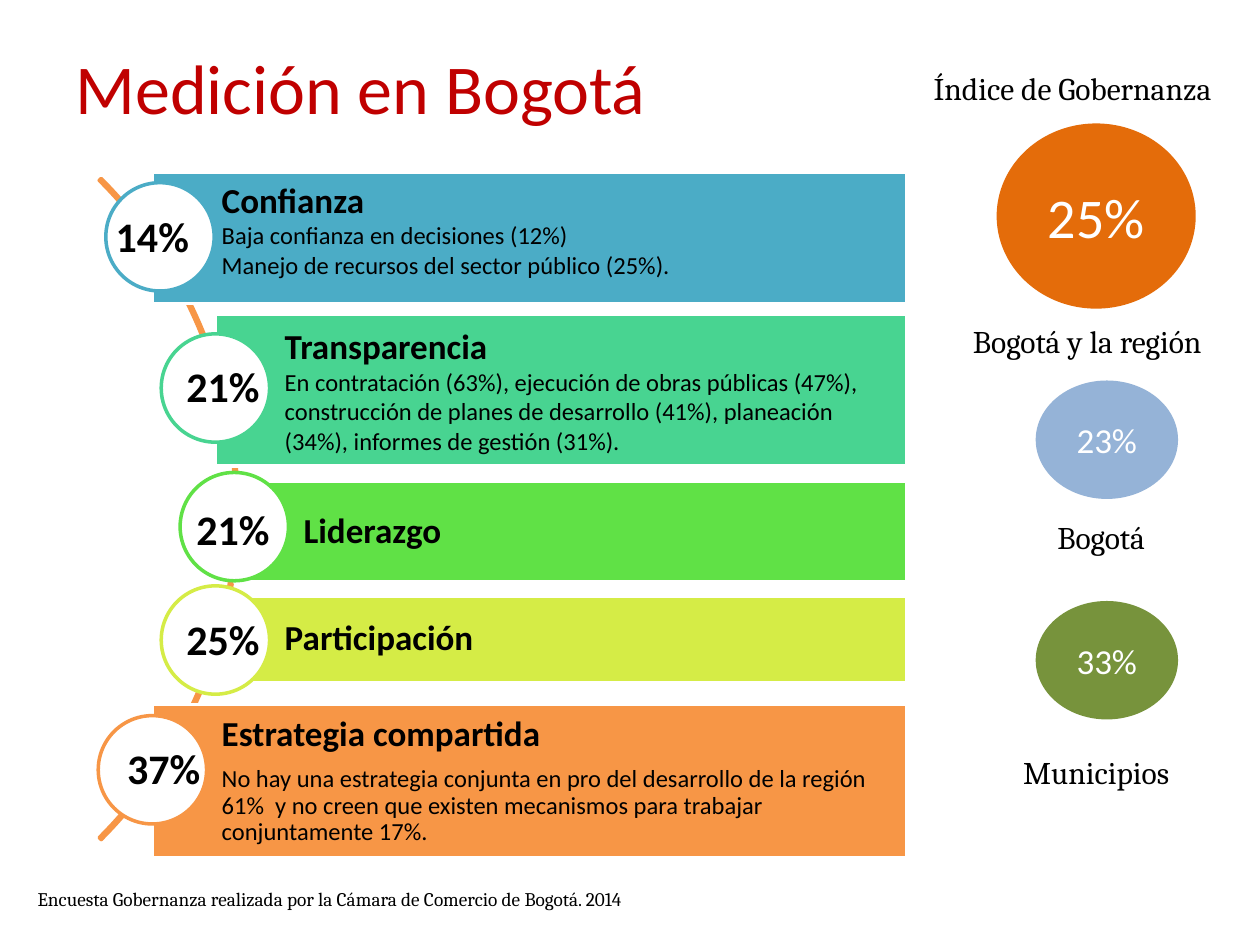
from dataclasses import dataclass

from pptx import Presentation
from pptx.dml.color import RGBColor
from pptx.enum.shapes import MSO_SHAPE as Shape
from pptx.enum.text import MSO_ANCHOR as Anchor, PP_ALIGN as Align
from pptx.util import Inches, Pt


@dataclass(frozen=True)
class Theme:
    sans: str = "Calibri"
    serif: str = "Cambria"
    title: str = "C00000"
    ink: str = "000000"
    paper: str = "FFFFFF"
    arc: str = "F79646"
    title_size: int = 40
    badge_size: int = 24
    heading_size: int = 20
    label_size: int = 18
    body_size: int = 14
    note_size: int = 11
    outline: int = 2


THEME = Theme()

BANDS = [
    dict(left=1.21, top=1.37, height=1.04, color="4BACC6", circle=(0.84, 1.45),
         badge=(0.82, 1.62), share="14%", heading="Confianza", bottom=0.21,
         details=["Baja confianza en decisiones (12%)",
                  "Manejo de recursos del sector público (25%)."]),
    dict(left=1.71, top=2.49, height=1.21, color="48D491", circle=(1.28, 2.65),
         badge=(1.38, 2.81), share="21%", heading="Transparencia",
         details=["En contratación (63%), ejecución de obras públicas (47%), "
                  "construcción de planes de desarrollo (41%), planeación "
                  "(34%), informes de gestión (31%)."]),
    dict(left=1.86, top=3.82, height=0.8, color="60E146", circle=(1.43, 3.75),
         badge=(1.46, 3.95), share="21%", heading="Liderazgo",
         spacing=0.9, after=7),
    dict(left=1.71, top=4.73, height=0.69, color="D5EC46", circle=(1.28, 4.65),
         badge=(1.38, 4.82), share="25%", heading="Participación",
         spacing=0.9, after=7),
    dict(left=1.21, top=5.59, height=1.22, color="F79646", circle=(0.78, 5.68),
         badge=(0.91, 5.84), share="37%", heading="Estrategia compartida",
         spacing=0.9, after=7,
         details=["No hay una estrategia conjunta en pro del desarrollo de la "
                  "región 61%  y no creen que existen mecanismos para trabajar "
                  "conjuntamente 17%."]),
]

INDEXES = [
    ("25%", (7.91, 0.98, 1.58, 1.47), "E46C0A", 32,
     "Bogotá y la región", (7.38, 2.51, 2.5, 0.4)),
    ("23%", (8.22, 3.02, 1.13, 0.94), "95B3D7", 20,
     "Bogotá", (8.07, 4.06, 1.34, 0.4)),
    ("33%", (8.22, 4.77, 1.13, 0.94), "77933C", 20,
     "Municipios", (7.76, 5.93, 1.88, 0.4)),
]


def write(paragraph, text, *, size, font=THEME.sans, color=THEME.ink,
          bold=False, align=Align.LEFT, spacing=None, after=0):
    paragraph.alignment = align
    paragraph.space_before = Pt(0)
    paragraph.space_after = Pt(after)
    if spacing:
        paragraph.line_spacing = spacing
    run = paragraph.add_run()
    run.text = text
    run.font.name = font
    run.font.size = Pt(size)
    run.font.bold = bold
    run.font.color.rgb = RGBColor.from_string(color)


class SlideBuilder:
    def __init__(self, slide, theme):
        self.slide = slide
        self.theme = theme

    def title(self, text, box):
        heading = self.slide.shapes.title
        heading.left, heading.top, heading.width, heading.height = map(Inches, box)
        heading.text_frame.vertical_anchor = Anchor.MIDDLE
        write(heading.text_frame.paragraphs[0], text,
              size=self.theme.title_size, color=self.theme.title)

    def text(self, text, box, wrap=True, **style):
        frame = self.slide.shapes.add_textbox(*map(Inches, box)).text_frame
        frame.word_wrap = wrap
        write(frame.paragraphs[0], text, **style)

    def shape(self, kind, box, fill=None, line=None):
        figure = self.slide.shapes.add_shape(kind, *map(Inches, box))
        figure.shadow.inherit = False
        if fill:
            figure.fill.solid()
            figure.fill.fore_color.rgb = RGBColor.from_string(fill)
        else:
            figure.fill.background()
        if line:
            figure.line.color.rgb = RGBColor.from_string(line)
            figure.line.width = Pt(self.theme.outline)
        else:
            figure.line.fill.background()
        return figure

    def arc(self, box):
        curve = self.shape(Shape.BLOCK_ARC, box, line=self.theme.arc)
        for position, value in enumerate((189, 27, 0.003)):
            curve.adjustments[position] = value

    def band(self, left, top, height, color, circle, heading, details=(),
             bottom=0.06, spacing=None, after=0, right=7.2, **_):
        theme = self.theme
        bar = self.shape(Shape.RECTANGLE, (left, top, right - left, height),
                         color, theme.paper)
        frame = bar.text_frame
        frame.word_wrap = True
        frame.vertical_anchor = Anchor.MIDDLE
        frame.margin_left = Inches(0.55)
        frame.margin_top = frame.margin_right = Inches(0.06)
        frame.margin_bottom = Inches(bottom)
        write(frame.paragraphs[0], heading, size=theme.heading_size,
              bold=True, spacing=spacing, after=after)
        for detail in details:
            write(frame.add_paragraph(), detail, size=theme.body_size,
                  spacing=spacing, after=after * 0.7)
        self.shape(Shape.OVAL, (*circle, 0.86, 0.86), theme.paper, color)

    def badge(self, share, corner):
        self.text(share, (*corner, 0.79, 0.5), wrap=False,
                  size=self.theme.badge_size, bold=True)

    def label(self, text, box):
        self.text(text, box, size=self.theme.label_size,
                  font=self.theme.serif, align=Align.CENTER)

    def index(self, share, box, color, size, place, place_box):
        frame = self.shape(Shape.FLOWCHART_CONNECTOR, box, color).text_frame
        frame.vertical_anchor = Anchor.MIDDLE
        write(frame.paragraphs[0], share, size=size,
              color=self.theme.paper, align=Align.CENTER)
        self.label(place, place_box)


def main():
    deck = Presentation()
    deck.slide_width, deck.slide_height = Inches(10), Inches(7.5)
    builder = SlideBuilder(deck.slides.add_slide(deck.slide_layouts[5]), THEME)
    builder.title("Medición en Bogotá", (0.5, 0.3, 9, 0.77))
    builder.label("Índice de Gobernanza ", (7.2, 0.5, 2.68, 0.4))
    for index in INDEXES:
        builder.index(*index)
    builder.arc((-5.53, 0.33, 7.42, 7.42))
    for band in BANDS:
        builder.band(**band)
    for band in BANDS:
        builder.badge(band["share"], band["badge"])
    builder.text("Encuesta Gobernanza realizada por la Cámara de Comercio de "
                 "Bogotá. 2014", (0.2, 6.99, 6.3, 0.29),
                 size=THEME.note_size, font=THEME.serif)
    deck.save("out.pptx")


if __name__ == "__main__":
    main()
